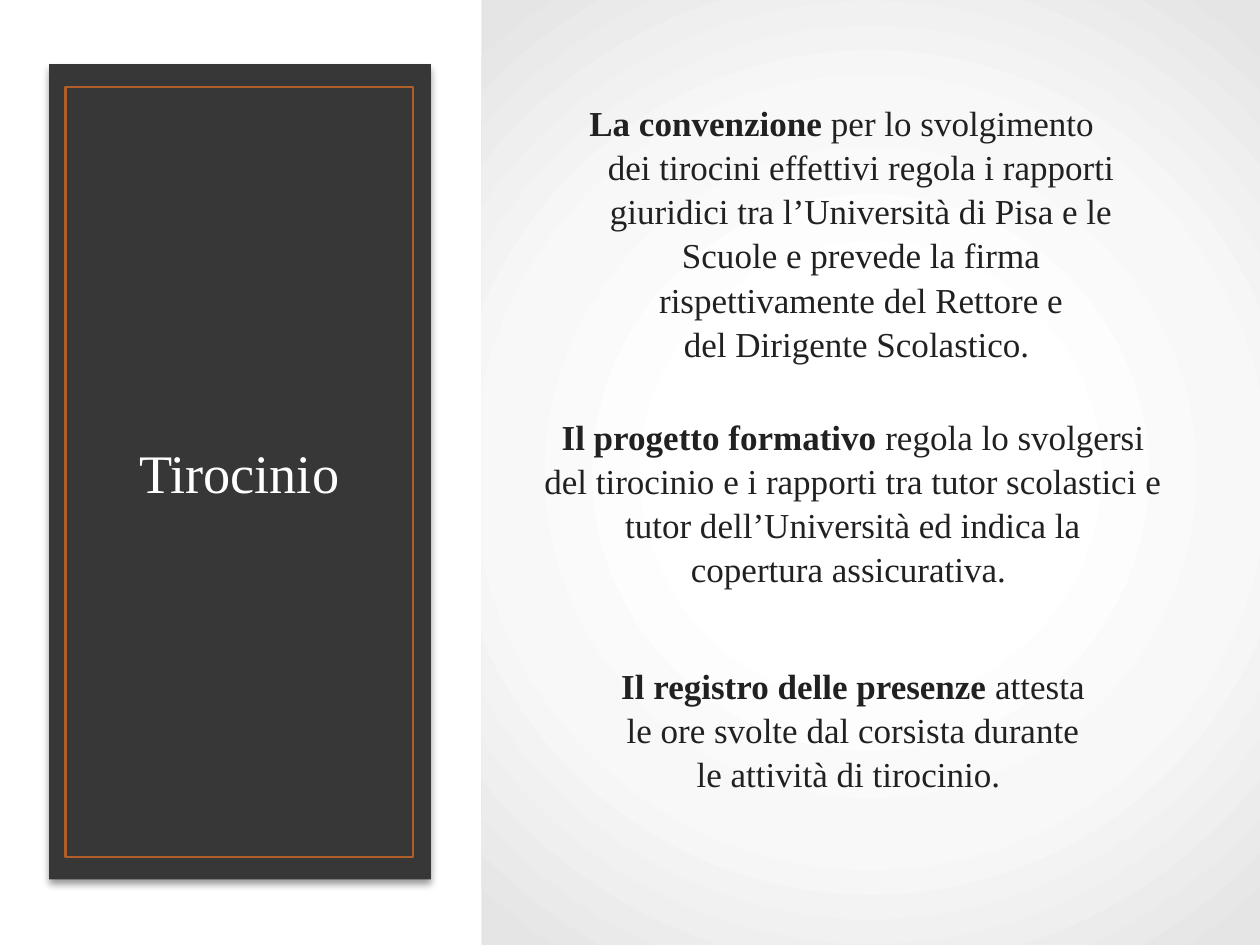
import pptx
import pptx.util
import pptx.dml.color
import pptx.oxml
import pptx.oxml.ns
import pptx.enum.shapes
import pptx.enum.text

COLS, ROWS = 100, 75
CELL = pptx.util.Inches(0.1)
FONT = "Times New Roman"
INK = "212121"
NS = pptx.oxml.ns.nsdecls("a")
STOPS = [(0, "FFFFFF"), (30, "FFFFFF"), (61, "F8F8F8"), (97, "E5E5E5")]

PACT = [("La convenzione~", True),
        ("per lo svolgimento dei~tirocini effettivi regola i rapporti "
         "giuridici tra~l’Università di Pisa e le Scuole e prevede "
         "la~firma rispettivamente del Rettore e del~Dirigente "
         "Scolastico.~", False)]
PLAN = [("Il progetto formativo~", True),
        ("regola lo~svolgersi del~tirocinio e i rapporti tra~tutor "
         "scolastici e tutor~dell’Università ed~indica la "
         "copertura~assicurativa.~", False)]
LOG = [("Il registro delle~presenze", True),
       ("~attesta le~ore~svolte~dal corsista durante le~attività~di"
        "~tirocinio.~", False)]


def grid(*cells):
    return [round(n * CELL) for n in cells]


def paint(item, code):
    item.rgb = pptx.dml.color.RGBColor.from_string(code)


def add_box(slide, area, fill=None, line=None):
    kind = pptx.enum.shapes.MSO_SHAPE.RECTANGLE
    box = slide.shapes.add_shape(kind, *grid(*area))
    box.shadow.inherit = False
    if fill:
        box.fill.solid()
        paint(box.fill.fore_color, fill)
    else:
        box.fill.background()
    if line:
        paint(box.line.color, line)
        box.line.width = pptx.util.Pt(1.25)
    else:
        box.line.fill.background()
    return box


def add_shade(box):
    props = box._element.spPr
    blur, gap = pptx.util.Pt(4), pptx.util.Pt(3)
    shade = pptx.oxml.parse_xml(
        f'<a:outerShdw {NS} blurRad="{blur}" dist="{gap}" dir="5400000" '
        'rotWithShape="0"><a:srgbClr val="000000"><a:alpha val="40000"/>'
        '</a:srgbClr></a:outerShdw>')
    props.find(pptx.oxml.ns.qn("a:effectLst")).append(shade)


def add_glow(box):
    marks = "".join(
        f'<a:gs pos="{spot * 1000}"><a:srgbClr val="{code}"/></a:gs>'
        for spot, code in STOPS)
    glow = pptx.oxml.parse_xml(
        f'<a:gradFill {NS} rotWithShape="1"><a:gsLst>{marks}</a:gsLst>'
        '<a:path path="circle"><a:fillToRect l="50000" t="50000" '
        'r="50000" b="50000"/></a:path></a:gradFill>')
    props = box._element.spPr
    old = props.find(pptx.oxml.ns.qn("a:solidFill"))
    props.replace(old, glow)


def add_text(slide, area, runs, size=20, code=INK, middle=False):
    frame = slide.shapes.add_textbox(*grid(*area)).text_frame
    frame.word_wrap = True
    if middle:
        frame.vertical_anchor = pptx.enum.text.MSO_ANCHOR.MIDDLE
    para = frame.paragraphs[0]
    para.alignment = pptx.enum.text.PP_ALIGN.CENTER
    for words, bold in runs:
        run = para.add_run()
        run.text = words.replace("~", chr(160))
        run.font.name = FONT
        run.font.size = pptx.util.Pt(size)
        run.font.bold = bold
        paint(run.font.color, code)
    return frame


def main():
    deck = pptx.Presentation()
    deck.slide_width, deck.slide_height = grid(COLS, ROWS)
    slide = deck.slides.add_slide(deck.slide_layouts[6])

    add_shade(add_box(slide, (3.9, 5.1, 30.3, 64.7), fill="373737"))
    add_box(slide, (5.2, 6.9, 27.6, 61.1), line="B15E28")
    add_text(slide, (7.8, 10.4, 22.4, 54.1), [("Tirocinio", False)],
             31, "FFFFFF", True)

    left = 38.2
    add_glow(add_box(slide, (left, 0, COLS - left, ROWS), fill="FFFFFF"))

    pact = add_text(slide, (41.5, 11.9, 50.6, 17.5), PACT, middle=True)
    pact.margin_bottom = pptx.util.Inches(0.5)
    props = pact.paragraphs[0]._p.get_or_add_pPr()
    hang = pptx.util.Inches(0.31)
    props.set("marL", str(hang))
    props.set("indent", str(-hang))
    plan = add_text(slide, (41.6, 32.3, 52.2, 14.5), PLAN)
    log = add_text(slide, (41.6, 52.1, 52.2, 11.1), LOG)
    for frame in (pact, plan, log):
        frame.paragraphs[0].line_spacing = 1.05

    deck.save("out.pptx")


if __name__ == "__main__":
    main()
